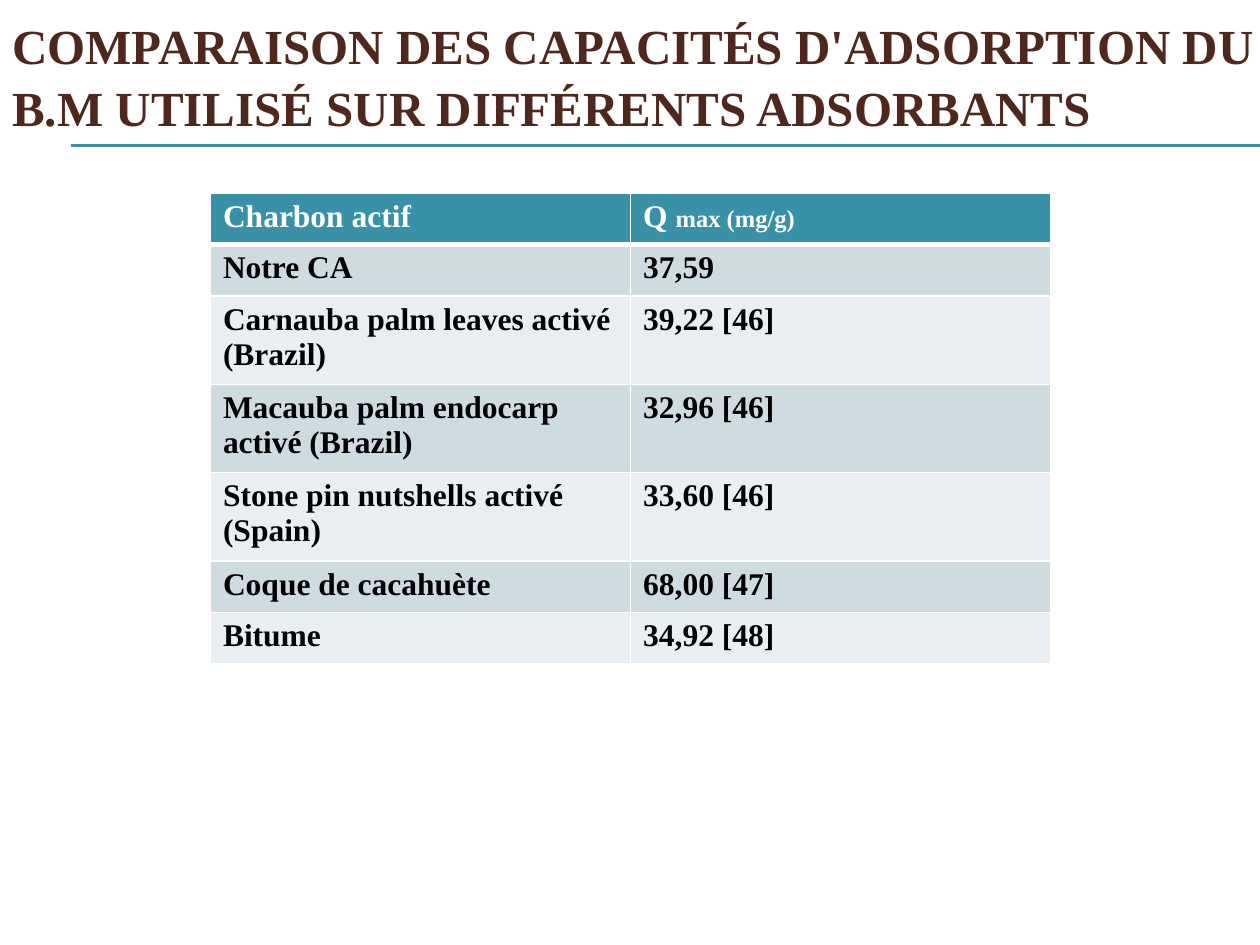
from lxml.etree import SubElement
from pptx import Presentation
from pptx.dml.color import RGBColor
from pptx.enum.shapes import MSO_CONNECTOR
from pptx.enum.text import MSO_ANCHOR, PP_ALIGN
from pptx.oxml.ns import qn
from pptx.util import Inches, Pt

TEAL = RGBColor(0x38, 0x91, 0xA7)
BROWN = RGBColor(0x4F, 0x27, 0x1C)
WHITE = RGBColor(0xFF, 0xFF, 0xFF)
BLACK = RGBColor(0x00, 0x00, 0x00)
BAND_DARK = RGBColor(0xCE, 0xDC, 0xE1)
BAND_LIGHT = RGBColor(0xE8, 0xEE, 0xF1)

HEADER = ("Charbon actif", ("Q ", "max (mg/g)"))
CAPACITIES = [
    ("Notre CA", "37,59"),
    ("Carnauba palm leaves activé (Brazil)", "39,22 [46]"),
    ("Macauba palm endocarp activé (Brazil)", "32,96 [46]"),
    ("Stone pin nutshells activé (Spain)", "33,60 [46]"),
    ("Coque de cacahuète", "68,00 [47]"),
    ("Bitume", "34,92 [48]"),
]


class SlideBuilder:
    font = "Times New Roman"
    title_size, body_size, unit_size = 28, 18, 14

    def __init__(self, slide):
        self.slide = slide

    def style(self, run, size, color):
        run.font.name = self.font
        run.font.size = Pt(size)
        run.font.bold = True
        run.font.color.rgb = color

    def rule(self, left, right, y):
        line = self.slide.shapes.add_connector(
            MSO_CONNECTOR.STRAIGHT, Inches(left), Inches(y), Inches(right), Inches(y))
        line.line.color.rgb = TEAL
        line.line.width = Pt(0.75)
        SubElement(line._element.spPr, qn("a:effectLst"))

    def title(self, text, left, top, width, height):
        box = self.slide.shapes.add_textbox(
            Inches(left), Inches(top), Inches(width), Inches(height))
        frame = box.text_frame
        frame.word_wrap = True
        frame.vertical_anchor = MSO_ANCHOR.MIDDLE
        frame.text = text
        paragraph = frame.paragraphs[0]
        paragraph.alignment = PP_ALIGN.LEFT
        paragraph.line_spacing = 1.05
        self.style(paragraph.runs[0], self.title_size, BROWN)

    def borders(self, cell, bottom_width):
        properties = cell._tc.get_or_add_tcPr()
        for side, width in (("L", 1), ("R", 1), ("T", 1), ("B", bottom_width)):
            edge = SubElement(properties, qn(f"a:ln{side}"), w=str(Pt(width)))
            fill = SubElement(edge, qn("a:solidFill"))
            SubElement(fill, qn("a:srgbClr"), val=str(WHITE))

    def cell(self, cell, texts, color, fill, bottom_width=1):
        self.borders(cell, bottom_width)
        cell.fill.solid()
        cell.fill.fore_color.rgb = fill
        paragraph = cell.text_frame.paragraphs[0]
        for text, size in zip(texts, (self.body_size, self.unit_size)):
            run = paragraph.add_run()
            run.text = text
            self.style(run, size, color)

    def table(self, header, rows, left, top, width, row_height):
        table = self.slide.shapes.add_table(
            len(rows) + 1, len(header), Inches(left), Inches(top),
            Inches(width), Inches(row_height * (len(rows) + 1))).table
        for column, texts in enumerate(header):
            texts = (texts,) if isinstance(texts, str) else texts
            self.cell(table.cell(0, column), texts, WHITE, TEAL, bottom_width=3)
        for number, row in enumerate(rows, start=1):
            band = BAND_DARK if number % 2 else BAND_LIGHT
            for column, text in enumerate(row):
                self.cell(table.cell(number, column), (text,), BLACK, band)


def main():
    presentation = Presentation()
    presentation.slide_width = Inches(10)
    presentation.slide_height = Inches(7.5)
    builder = SlideBuilder(presentation.slides.add_slide(presentation.slide_layouts[6]))

    # Double rule under the title
    for y in (1.15, 1.16):
        builder.rule(0.56, 10, y)

    # Title
    builder.title("COMPARAISON DES CAPACITÉS D'ADSORPTION DU B.M UTILISÉ "
                  "SUR DIFFÉRENTS ADSORBANTS", 0, 0, 10.08, 1.18)

    # Adsorption capacities
    builder.table(HEADER, CAPACITIES, 1.67, 1.53, 6.67, 0.41)

    presentation.save("out.pptx")


if __name__ == "__main__":
    main()
